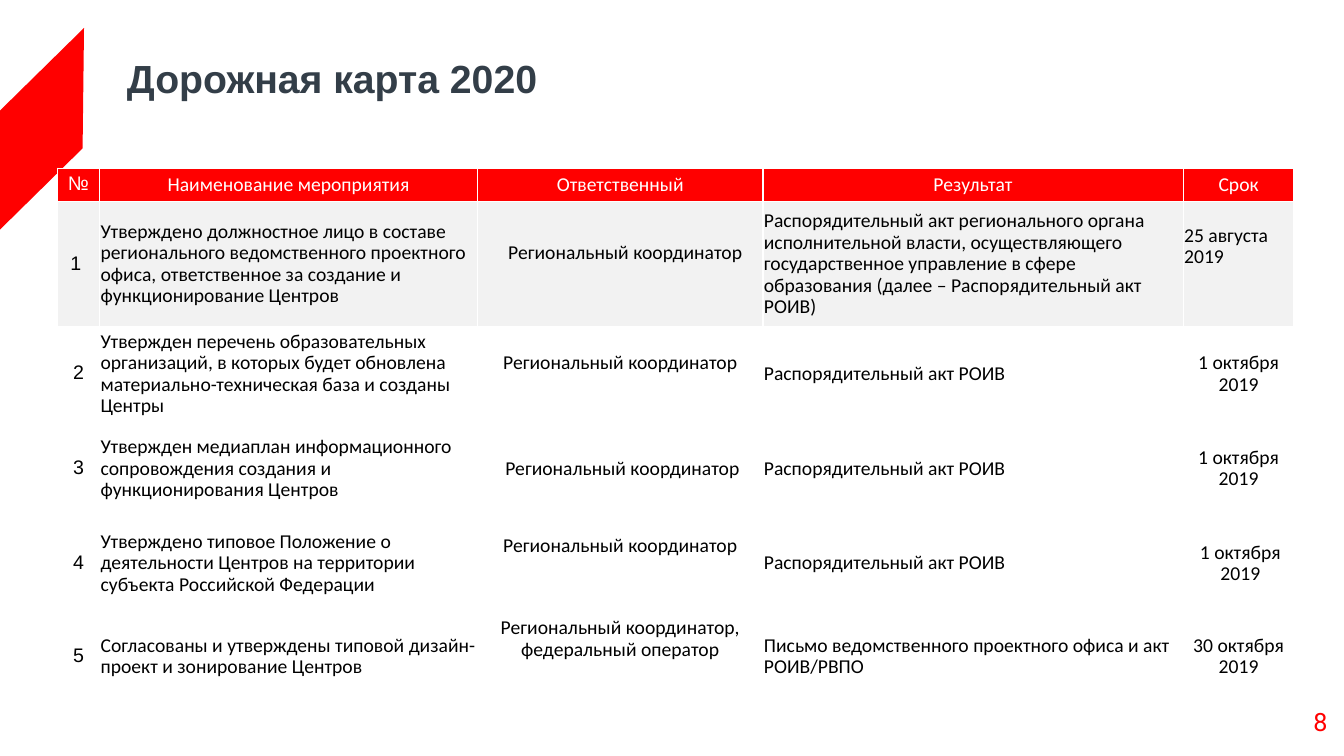
from pptx import Presentation
from pptx.dml.color import RGBColor
from pptx.enum.text import MSO_ANCHOR as Anchor, PP_ALIGN as Align
from pptx.util import Pt

COLORS = {
    "red": "FF0000",
    "slate": "333E48",
    "white": "FFFFFF",
    "light": "F2F2F2",
    "black": "000000",
}
COLUMN_WIDTHS = [30.2, 270, 203.8, 300.2, 79.2]
ROW_HEIGHTS = [23.8, 89.3, 67.7, 67.7, 67.7, 65.5]
COORDINATOR = "Региональный координатор"
ORDER = "Распорядительный акт РОИВ"
ROADMAP = [
    ["№", "Наименование мероприятия", "Ответственный", "Результат", "Срок"],
    ["1", "Утверждено должностное лицо в составе регионального ведомственного "
     "проектного офиса, ответственное за создание и функционирование Центров",
     COORDINATOR,
     "Распорядительный акт регионального органа исполнительной власти, "
     "осуществляющего государственное управление в сфере образования "
     "(далее – Распорядительный акт РОИВ)", "25 августа 2019"],
    ["2", "Утвержден перечень образовательных организаций, в которых будет "
     "обновлена материально-техническая база и созданы Центры",
     COORDINATOR, ORDER, "1 октября 2019"],
    ["3", "Утвержден медиаплан информационного сопровождения создания и "
     "функционирования Центров", COORDINATOR, ORDER, "1 октября 2019"],
    ["4", "Утверждено типовое Положение о деятельности Центров на территории "
     "субъекта Российской Федерации", COORDINATOR, ORDER, "1 октября 2019"],
    ["5", "Согласованы и утверждены типовой дизайн-проект и зонирование Центров",
     "Региональный координатор, федеральный оператор",
     "Письмо ведомственного проектного офиса и акт РОИВ/РВПО", "30 октября 2019"],
]
CELL_MARGINS = {
    (1, 0): {"right": 4.5},
    (1, 2): {"left": 7.2, "bottom": 15.4},
    (1, 4): {"bottom": 25.4},
    (2, 2): {"bottom": 15.4},
    (3, 2): {"left": 3.2},
    (4, 2): {"bottom": 25.4},
    (4, 4): {"left": 3.2},
    (5, 2): {"bottom": 25.4},
}


class RoadmapSlide:
    def __init__(self, presentation):
        self.slide = presentation.slides.add_slide(presentation.slide_layouts[5])
        self.shapes = self.slide.shapes

    def color(self, name):
        return RGBColor.from_string(COLORS[name])

    def style(self, paragraph, font, size, color, align, bold=False):
        paragraph.alignment = align
        paragraph.line_spacing = 0.9
        paragraph.font.name = font
        paragraph.font.size = Pt(size)
        paragraph.font.bold = bold
        paragraph.font.color.rgb = self.color(color)

    def set_margins(self, target, margin, **sides):
        for side in ("left", "top", "right", "bottom"):
            setattr(target, f"margin_{side}", Pt(sides.get(side, margin)))

    def place(self, shape, left, top, width, height):
        shape.left, shape.top = Pt(left), Pt(top)
        shape.width, shape.height = Pt(width), Pt(height)

    def ribbon(self, points, color):
        builder = self.shapes.build_freeform(*points[0], scale=Pt(1))
        builder.add_line_segments(points[1:], close=True)
        shape = builder.convert_to_shape()
        shape.shadow.inherit = False
        shape.fill.solid()
        shape.fill.fore_color.rgb = self.color(color)
        shape.line.fill.background()

    def title(self, text, *box):
        shape = self.shapes.title
        self.place(shape, *box)
        frame = shape.text_frame
        frame.text = text
        frame.vertical_anchor = Anchor.MIDDLE
        self.set_margins(frame, 3.6)
        self.style(frame.paragraphs[0], "Arial", 28, "slate", Align.LEFT, True)

    def page_number(self, text, *box):
        frame = self.shapes.add_textbox(*map(Pt, box)).text_frame
        frame.word_wrap = False
        frame.text = text
        self.set_margins(frame, 3.6)
        paragraph = frame.paragraphs[0]
        self.style(paragraph, "Roboto", 18, "red", Align.RIGHT)
        paragraph.line_spacing = 1.0

    def table(self, rows, left, top):
        box = (left, top, sum(COLUMN_WIDTHS), sum(ROW_HEIGHTS))
        table = self.shapes.add_table(
            len(rows), len(COLUMN_WIDTHS), *map(Pt, box)).table
        table.first_row = table.horz_banding = False
        for column, width in zip(table.columns, COLUMN_WIDTHS):
            column.width = Pt(width)
        for row, height in zip(table.rows, ROW_HEIGHTS):
            row.height = Pt(height)
        for row, texts in enumerate(rows):
            for column, text in enumerate(texts):
                self.cell(table.cell(row, column), text, row, column)

    def cell(self, cell, text, row, column):
        cell.text = text
        cell.vertical_anchor = Anchor.MIDDLE
        margin = 0 if column == 2 else 0.7
        self.set_margins(cell, margin, **CELL_MARGINS.get((row, column), {}))
        cell.fill.solid()
        fill = {0: "red", 1: "light"}.get(row, "white")
        cell.fill.fore_color.rgb = self.color(fill)
        left_aligned = row > 0 and column in (1, 3) or (row, column) == (1, 4)
        self.style(
            cell.text_frame.paragraphs[0],
            "Arial" if column == 0 else "Calibri", 14,
            "white" if row == 0 else "black",
            Align.LEFT if left_aligned else Align.CENTER)


def main():
    presentation = Presentation()
    presentation.slide_width, presentation.slide_height = Pt(960), Pt(540)
    roadmap = RoadmapSlide(presentation)
    roadmap.ribbon([(0, 164.5), (0, 79), (60, 20), (59.3, 106)], "red")
    roadmap.page_number("8", 934.6, 501, 17.3, 28)
    roadmap.title("Дорожная карта 2020", 87.1, 21.6, 634.3, 72)
    roadmap.table(ROADMAP, 41, 120.2)
    presentation.save("out.pptx")


if __name__ == "__main__":
    main()
